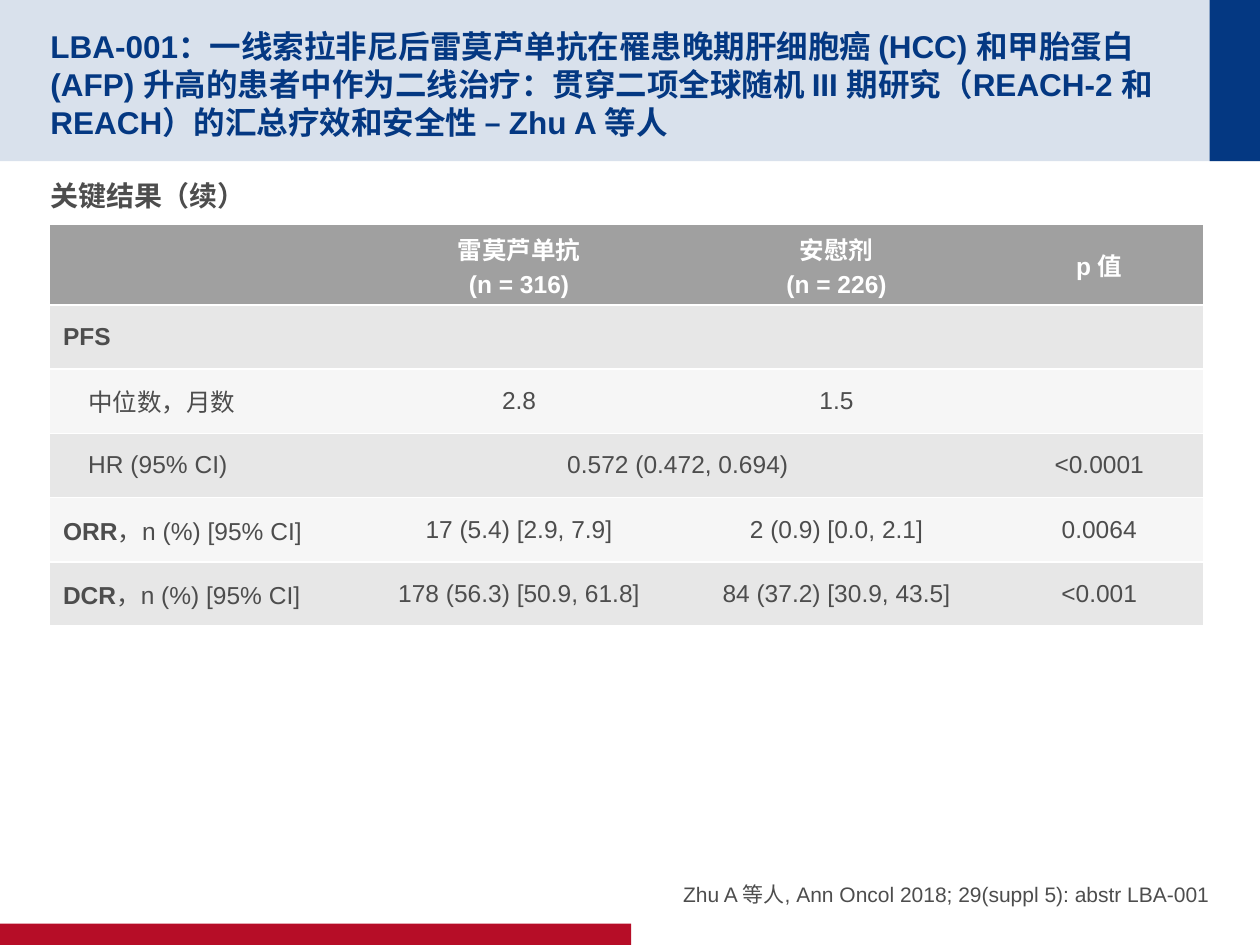
from pptx import Presentation
from pptx.dml.color import RGBColor
from pptx.enum.lang import MSO_LANGUAGE_ID
from pptx.enum.shapes import MSO_SHAPE
from pptx.enum.text import MSO_ANCHOR, PP_ALIGN
from pptx.oxml import parse_xml
from pptx.oxml.ns import nsdecls
from pptx.util import Inches, Pt

RECT = MSO_SHAPE.RECTANGLE
TOP, MIDDLE, BOTTOM = MSO_ANCHOR.TOP, MSO_ANCHOR.MIDDLE, MSO_ANCHOR.BOTTOM
LEFT, CENTER, RIGHT = PP_ALIGN.LEFT, PP_ALIGN.CENTER, PP_ALIGN.RIGHT
CHINESE = MSO_LANGUAGE_ID.SIMPLIFIED_CHINESE
NAVY, PALE_NAVY, RED = "043882", "D9E1EC", "B60D27"
TEXT, WHITE, GRAY = "4D4D4D", "FFFFFF", "A0A0A0"
BANDS = ["E7E7E7", "F6F6F6"]


def color(value):
    return RGBColor.from_string(value)


def style(r, size, value, bold):
    r.font.name = "Arial"
    r.font.size = Pt(size)
    r.font.bold = bold
    r.font.color.rgb = color(value)
    r.font.language_id = CHINESE


prs = Presentation()
prs.slide_width, prs.slide_height = Inches(10), Inches(7.5)
s = prs.slides.add_slide(prs.slide_layouts[6])

# Header band, corner block and footer bar
for x, y, w, h, fill in [
    (0, 0, 10, 1.28, PALE_NAVY),
    (9.6, 0, 0.4, 1.28, NAVY),
    (0, 7.33, 5.01, 0.17, RED),
]:
    sp = s.shapes.add_shape(RECT, Inches(x), Inches(y), Inches(w), Inches(h))
    sp.shadow.inherit = False
    sp.fill.solid()
    sp.fill.fore_color.rgb = color(fill)
    sp.line.fill.background()

# Title, citation and section heading
title = ("LBA-001：一线索拉非尼后雷莫芦单抗在罹患晚期肝细胞癌 (HCC) 和甲胎蛋白 (AFP) "
         "升高的患者中作为二线治疗：贯穿二项全球随机 III 期研究（REACH-2 和 REACH）"
         "的汇总疗效和安全性 – Zhu A 等人")
citation = "Zhu A 等人, Ann Oncol 2018; 29(suppl 5): abstr LBA-001"
for x, y, w, h, inset, anchor, align, text, size, value, bold in [
    (0.4, 0.2, 9.01, 0.88, 0.05, MIDDLE, LEFT, title, 18, NAVY, True),
    (5.08, 6.67, 4.52, 0.53, 0, BOTTOM, RIGHT, citation, 12, TEXT, False),
    (0.4, 1.37, 9.2, 0.4, 0.05, TOP, LEFT, "关键结果（续）", 16, TEXT, True),
]:
    sp = s.shapes.add_textbox(Inches(x), Inches(y), Inches(w), Inches(h))
    tf = sp.text_frame
    tf.word_wrap = True
    tf.vertical_anchor = anchor
    tf.margin_left = tf.margin_right = tf.margin_bottom = 0
    tf.margin_top = Inches(inset)
    tf.text = text
    p = tf.paragraphs[0]
    p.alignment = align
    style(p.runs[0], size, value, bold)

# Results table
rows = [
    ["", "雷莫芦单抗\n(n = 316)", "安慰剂\n(n = 226)", "p 值"],
    ["PFS", "", "", ""],
    ["中位数，月数", "2.8", "1.5", ""],
    ["HR (95% CI)", "0.572 (0.472, 0.694)", "", "<0.0001"],
    ["ORR，n (%) [95% CI]", "17 (5.4) [2.9, 7.9]", "2 (0.9) [0.0, 2.1]", "0.0064"],
    ["DCR，n (%) [95% CI]", "178 (56.3) [50.9, 61.8]", "84 (37.2) [30.9, 43.5]", "<0.001"],
]
bold_labels = ("PFS", "ORR", "DCR")
indented_rows = (2, 3)
frame = s.shapes.add_table(len(rows), 4, Inches(0.4), Inches(1.78), Inches(9.16), Inches(3.16))
table = frame.table
for column, width in zip(table.columns, [2.46, 2.52, 2.52, 1.65]):
    column.width = Inches(width)
for i, row in enumerate(table.rows):
    row.height = Inches(0.51 if i else 0.64)

for i, texts in enumerate(rows):
    for j, text in enumerate(texts):
        cell = table.cell(i, j)
        cell.vertical_anchor = MIDDLE
        tf = cell.text_frame
        label = text[:3]
        if label in bold_labels:
            p = tf.paragraphs[0]
            for part, bold in [(label, True), (text[3:], False)]:
                if part:
                    r = p.add_run()
                    r.text = part
                    style(r, 14, TEXT, bold)
        else:
            tf.text = text
            for p in tf.paragraphs:
                p.alignment = CENTER if j else LEFT
                if i == 0:
                    p.space_before = Pt(2.8)
                for r in p.runs:
                    style(r, 14, TEXT if i else WHITE, i == 0)
        if j == 0 and i in indented_rows:
            cell.margin_left = Inches(0.3)
        # White rules above and below, none at the sides
        tcPr = cell._tc.get_or_add_tcPr()
        for side in ("lnL", "lnR"):
            tcPr.append(parse_xml(f'<a:{side} {nsdecls("a")} w="0"><a:noFill/></a:{side}>'))
        for side in ("lnT", "lnB"):
            tcPr.append(parse_xml(
                f'<a:{side} {nsdecls("a")} w="12700"><a:solidFill>'
                f'<a:srgbClr val="{WHITE}"/></a:solidFill></a:{side}>'))
        cell.fill.solid()
        cell.fill.fore_color.rgb = color(BANDS[(i - 1) % 2] if i else GRAY)
table.cell(3, 1).merge(table.cell(3, 2))

prs.save("out.pptx")
